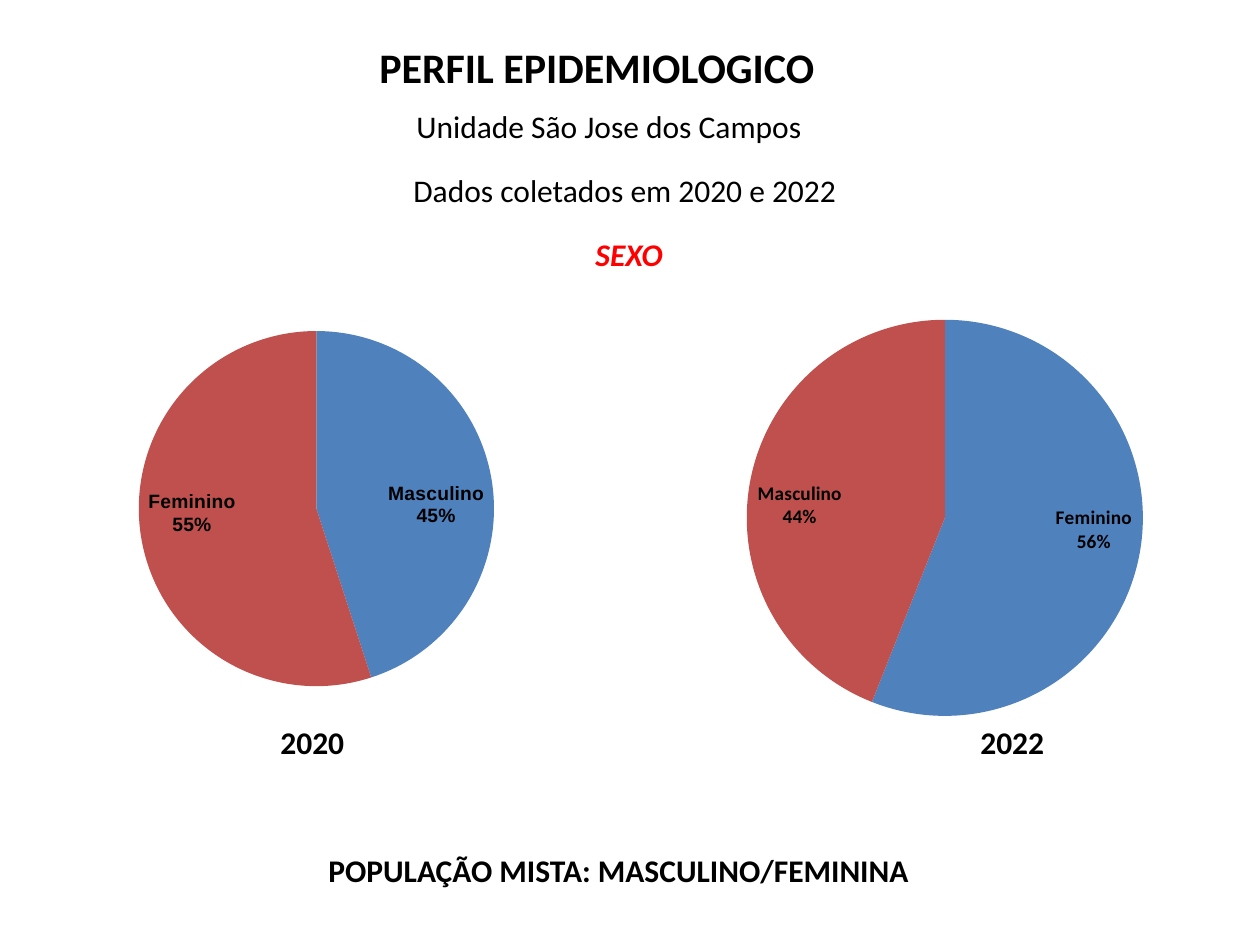
import pptx
import pptx.chart.data
import pptx.dml.color
import pptx.enum.chart
import pptx.enum.text
import pptx.oxml
import pptx.oxml.ns
import pptx.util

PX = 914400 / 126  # EMU per px
SLICE_COLORS = ["4F81BD", "C0504D"]


def px(n):
    return pptx.util.Emu(round(n * PX))


def rgb(value):
    return pptx.dml.color.RGBColor.from_string(value)


def add_text(s, text, box, size=18, bold=False, italic=False, color="000000"):
    tf = s.shapes.add_textbox(*map(px, box)).text_frame
    tf.word_wrap = False
    tf.auto_size = pptx.enum.text.MSO_AUTO_SIZE.SHAPE_TO_FIT_TEXT
    r = tf.paragraphs[0].add_run()
    r.text = text
    r.font.name = "Calibri"
    r.font.size = pptx.util.Pt(size)
    r.font.bold = bold
    r.font.italic = italic
    r.font.color.rgb = rgb(color)


def set_plot_layout(chart, layout):
    """Fix the inner plot area, given as fractions of the chart (x, y, w, h)."""
    area = chart._chartSpace.chart.plotArea
    for old in area.findall(pptx.oxml.ns.qn("c:layout")):
        area.remove(old)
    sizes = "".join(f'<c:{k} val="{v}"/>' for k, v in zip("xywh", layout))
    area.insert(0, pptx.oxml.parse_xml(
        f'<c:layout {pptx.oxml.ns.nsdecls("c")}><c:manualLayout>'
        '<c:layoutTarget val="inner"/><c:xMode val="edge"/><c:yMode val="edge"/>'
        f'{sizes}</c:manualLayout></c:layout>'))


def add_pie(s, box, shares, layout, label_font):
    data = pptx.chart.data.CategoryChartData()
    data.categories = list(shares)
    data.add_series("Series 1", list(shares.values()))
    chart = s.shapes.add_chart(
        pptx.enum.chart.XL_CHART_TYPE.PIE, *map(px, box), data).chart
    chart.has_title = False
    chart.has_legend = False
    chart.font.name = "Calibri"
    chart.font.size = pptx.util.Pt(10)
    chart.font.color.rgb = rgb("000000")
    set_plot_layout(chart, layout)

    # Slices
    series = chart.plots[0].series[0]
    for i, color in enumerate(SLICE_COLORS):
        fill = series.points[i].format.fill
        fill.solid()
        fill.fore_color.rgb = rgb(color)

    # Category and percentage on two lines
    labels = series.data_labels
    labels.show_category_name = True
    labels.show_percentage = True
    labels.show_value = False
    labels.number_format = "0%"
    labels.number_format_is_linked = False
    labels.position = pptx.enum.chart.XL_LABEL_POSITION.INSIDE_END
    labels.font.name = label_font
    labels.font.size = pptx.util.Pt(11)
    labels.font.bold = True
    labels.font.color.rgb = rgb("000000")
    separator = pptx.oxml.parse_xml(
        f'<c:separator {pptx.oxml.ns.nsdecls("c")}>\n</c:separator>')
    labels._element.find(pptx.oxml.ns.qn("c:showBubbleSize")).addnext(separator)


def add_heading(s, left, top):
    add_text(s, "PERFIL EPIDEMIOLOGICO", (left, top, 465, 63), size=24, bold=True)
    add_text(s, "Unidade São Jose dos Campos", (left + 37, top + 66, 413, 50))
    add_text(s, "Dados coletados em 2020 e 2022", (left + 34, top + 130, 454, 50))
    add_text(s, "SEXO", (left + 216, top + 194, 93, 50),
             bold=True, italic=True, color="FF0000")


def add_year(s, year, box, shares, layout, label_font, caption_left):
    add_pie(s, box, shares, layout, label_font)
    add_text(s, year, (box[0] + caption_left, 717, 89, 50), bold=True)


def main():
    prs = pptx.Presentation()
    prs.slide_width, prs.slide_height = px(1260), px(945)
    s = prs.slides.add_slide(prs.slide_layouts[6])

    add_heading(s, 367, 35)

    # One pie for each year
    add_year(s, "2020", (-8, 331, 630, 378), {"Masculino": 45, "Feminino": 55},
             (0.03, 0, 0.97, 0.94), "Arial", 276)
    add_year(s, "2022", (654, 290, 606, 426), {"Feminino": 56, "Masculino": 44},
             (0, 0.07, 0.96, 0.93), "Calibri", 314)

    # Closing line
    add_text(s, "POPULAÇÃO MISTA: MASCULINO/FEMININA", (316, 845, 611, 50), bold=True)

    prs.save("out.pptx")


if __name__ == "__main__":
    main()
